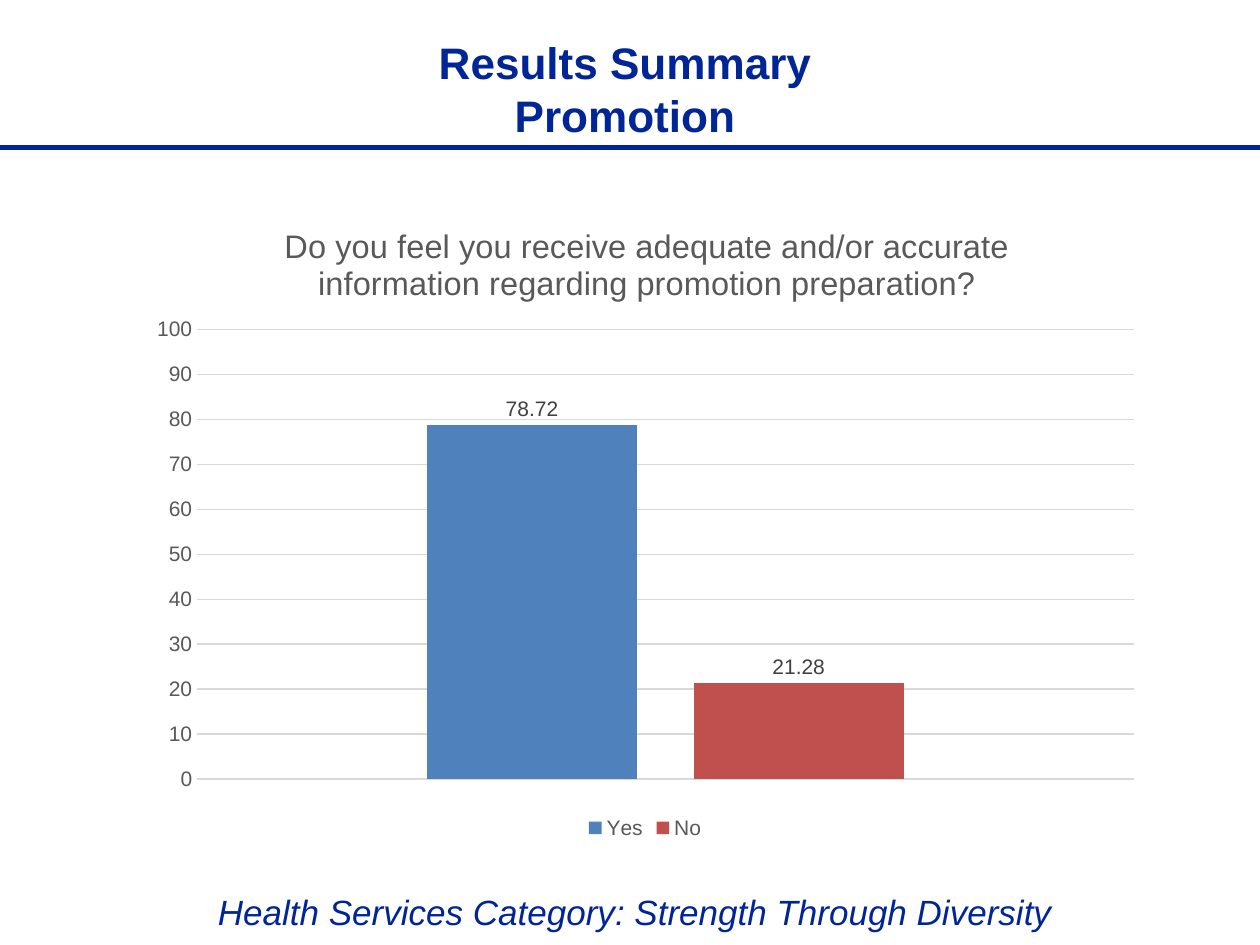
from lxml import etree
from pptx import Presentation
from pptx.chart.data import CategoryChartData
from pptx.dml.color import RGBColor
from pptx.enum.chart import XL_CHART_TYPE, XL_LABEL_POSITION, XL_LEGEND_POSITION, XL_TICK_MARK
from pptx.enum.shapes import MSO_CONNECTOR
from pptx.enum.text import MSO_ANCHOR, PP_ALIGN
from pptx.oxml import parse_xml
from pptx.oxml.ns import nsdecls, qn
from pptx.util import Inches, Pt

COLUMN = XL_CHART_TYPE.COLUMN_CLUSTERED
OUTSIDE_END = XL_LABEL_POSITION.OUTSIDE_END
BOTTOM = XL_LEGEND_POSITION.BOTTOM
NO_TICK = XL_TICK_MARK.NONE
STRAIGHT = MSO_CONNECTOR.STRAIGHT
MIDDLE = MSO_ANCHOR.MIDDLE
CENTER = PP_ALIGN.CENTER

NAVY = RGBColor(0x00, 0x25, 0x96)
TEXT_GRAY = RGBColor(0x59, 0x59, 0x59)
LABEL_GRAY = RGBColor(0x40, 0x40, 0x40)
GRID_GRAY = RGBColor(0xD9, 0xD9, 0xD9)
BLUE = RGBColor(0x4F, 0x81, 0xBD)
RED = RGBColor(0xC0, 0x50, 0x4D)

FONT = "Arial"
QUESTION = ("Do you feel you receive adequate and/or accurate "
            "information regarding promotion preparation?")
ANSWERS = [("Yes", 78.72, BLUE), ("No", 21.28, RED)]


def style_font(font, size, color, bold=False, italic=False):
    font.name = FONT
    font.size = Pt(size)
    font.color.rgb = color
    font.bold = bold
    font.italic = italic


def add_header(slide, left, top, width, height):
    title = slide.shapes.title
    title.left, title.top, title.width, title.height = left, top, width, height
    frame = title.text_frame
    frame.text = "Results Summary\vPromotion"
    frame.vertical_anchor = MIDDLE
    paragraph = frame.paragraphs[0]
    paragraph.alignment = CENTER
    style_font(paragraph.font, 25.2, NAVY, bold=True)

    # Rule across the whole slide, under the title
    bottom = top + height
    rule = slide.shapes.add_connector(STRAIGHT, 0, bottom, Inches(10), bottom)
    rule.line.color.rgb = NAVY
    rule.line.width = Pt(3)
    etree.SubElement(rule._element.spPr, qn("a:effectLst"))


def add_footer(slide, left, top, width, height):
    frame = slide.shapes.add_textbox(left, top, width, height).text_frame
    frame.word_wrap = True
    paragraph = frame.paragraphs[0]
    paragraph.text = "Health Services Category: Strength Through Diversity"
    paragraph.alignment = CENTER
    style_font(paragraph.font, 20, NAVY, italic=True)


def set_layout(parent, position, **fractions):
    """Place a chart part by fractions of the chart's size."""
    for old in parent.findall(qn("c:layout")):
        parent.remove(old)
    inner = '<c:layoutTarget val="inner"/>' if "w" in fractions else ""
    modes = '<c:xMode val="edge"/><c:yMode val="edge"/>'
    values = "".join(f'<c:{key} val="{value}"/>' for key, value in fractions.items())
    parent.insert(position, parse_xml(
        f'<c:layout {nsdecls("c")}><c:manualLayout>{inner}{modes}{values}'
        "</c:manualLayout></c:layout>"))


def add_answer_chart(slide, left, top, width, height):
    data = CategoryChartData(number_format="General")
    data.categories = ["1"]
    for name, value, _ in ANSWERS:
        data.add_series(name, [value])
    chart = slide.shapes.add_chart(COLUMN, left, top, width, height, data).chart
    style_font(chart.font, 12, TEXT_GRAY)

    # Question above the plot
    chart.has_title = True
    chart.chart_title.include_in_layout = False
    paragraph = chart.chart_title.text_frame.paragraphs[0]
    paragraph.text = QUESTION
    style_font(paragraph.font, 18.6, TEXT_GRAY)
    set_layout(chart.chart_title._element, 1, x=0.14, y=0.04)

    # Axes
    chart.category_axis.visible = False
    axis = chart.value_axis
    axis.minimum_scale, axis.maximum_scale, axis.major_unit = 0, 100, 10
    axis.major_tick_mark = axis.minor_tick_mark = NO_TICK
    axis.format.line.fill.background()
    axis.major_gridlines.format.line.color.rgb = GRID_GRAY
    axis.major_gridlines.format.line.width = Pt(0.75)
    style_font(axis.tick_labels.font, 12, TEXT_GRAY)

    # Columns
    plot = chart.plots[0]
    plot.gap_width, plot.overlap = 219, -27
    plot.vary_by_categories = False
    set_layout(plot._element.getparent(), 0, x=0.06, y=0.21, w=0.92, h=0.69)
    for series, (_, _, color) in zip(plot.series, ANSWERS):
        series.format.fill.solid()
        series.format.fill.fore_color.rgb = color
        labels = series.data_labels
        labels.show_value = True
        labels.position = OUTSIDE_END
        style_font(labels.font, 12, LABEL_GRAY)

    # Legend
    chart.has_legend = True
    chart.legend.position = BOTTOM
    chart.legend.include_in_layout = False
    style_font(chart.legend.font, 12, TEXT_GRAY)


def main():
    presentation = Presentation()
    presentation.slide_width = Inches(10)
    presentation.slide_height = Inches(7.5)
    slide = presentation.slides.add_slide(presentation.slide_layouts[5])
    add_header(slide, Inches(1.1), Inches(0.23), Inches(7.72), Inches(0.94))
    add_answer_chart(slide, Inches(1.08), Inches(1.53), Inches(8.08), Inches(5.17))
    add_footer(slide, Inches(0.84), Inches(7.02), Inches(8.4), Inches(0.44))
    presentation.save("out.pptx")


if __name__ == "__main__":
    main()
